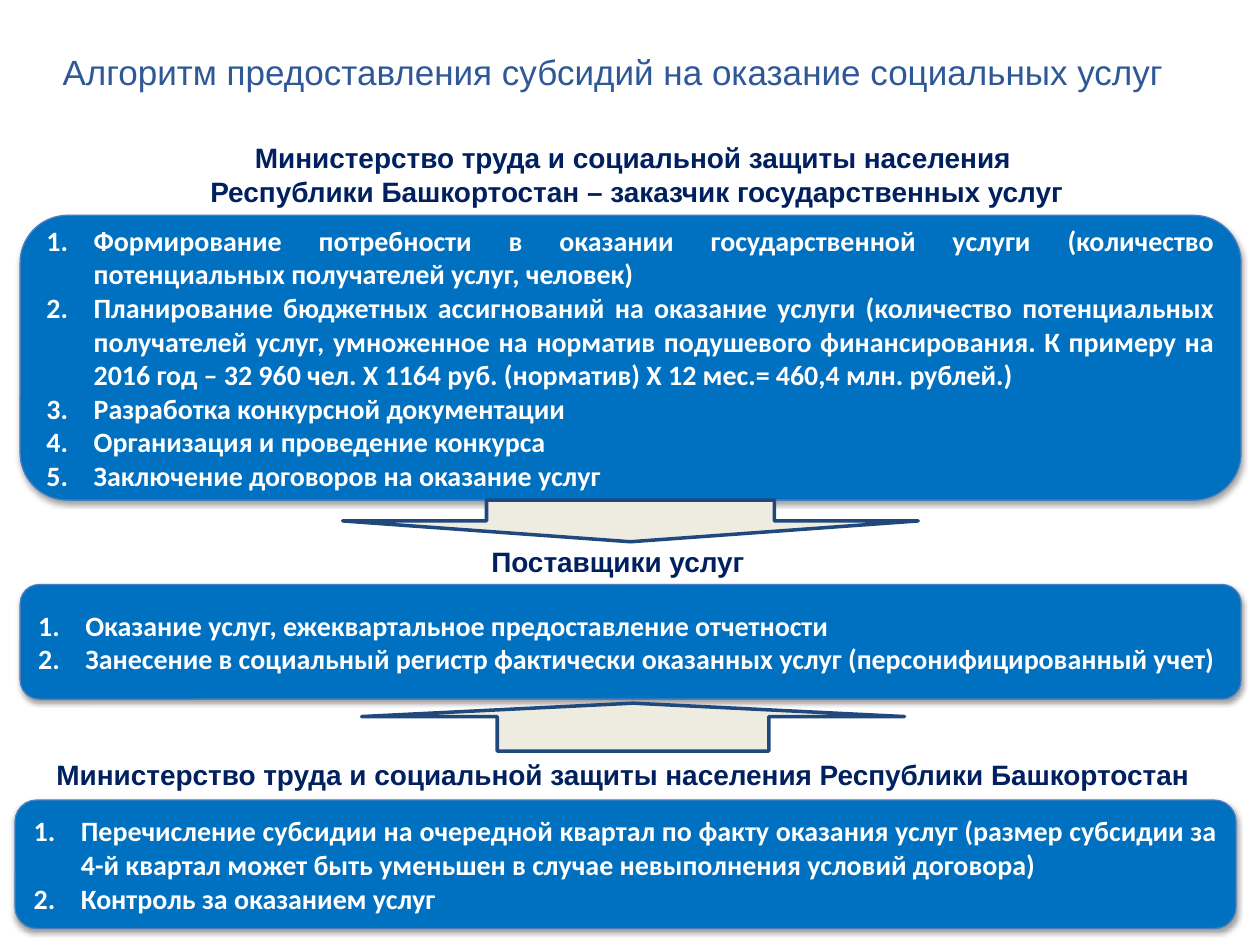
from lxml.etree import SubElement
from pptx import Presentation
from pptx.dml.color import RGBColor
from pptx.enum.shapes import MSO_SHAPE
from pptx.enum.text import MSO_ANCHOR, MSO_AUTO_SIZE, PP_ALIGN
from pptx.oxml.ns import qn
from pptx.util import Pt

NAVY = "002060"
LIST_INDENT = 27


def color(value):
    return RGBColor.from_string(value)


def place(shape, left, top, width, height):
    shape.left, shape.top = Pt(left), Pt(top)
    shape.width, shape.height = Pt(width), Pt(height)


def write_text(frame, lines, font="Arial", size=16, fill=NAVY, bold=True,
               align=PP_ALIGN.CENTER, anchor=MSO_ANCHOR.TOP, numbered=False):
    frame.word_wrap = True
    frame.auto_size = MSO_AUTO_SIZE.NONE
    frame.vertical_anchor = anchor
    for index, line in enumerate(lines):
        paragraph = frame.paragraphs[0] if index == 0 else frame.add_paragraph()
        paragraph.alignment = align
        if numbered:
            add_number(paragraph)
        run = paragraph.add_run()
        run.text = line
        run.font.name = font
        run.font.size = Pt(size)
        run.font.bold = bold
        run.font.color.rgb = color(fill)


def add_number(paragraph):
    properties = paragraph._p.get_or_add_pPr()
    properties.set("marL", str(Pt(LIST_INDENT)))
    properties.set("indent", str(-Pt(LIST_INDENT)))
    SubElement(properties, qn("a:buFont"), typeface="+mj-lt")
    SubElement(properties, qn("a:buAutoNum"), type="arabicPeriod")


def add_soft_shadow(shape):
    effects = shape._element.spPr.find(qn("a:effectLst"))
    shadow = SubElement(effects, qn("a:outerShdw"), blurRad=str(Pt(3.1)),
                        dist=str(Pt(1.6)), dir="5400000", rotWithShape="0")
    black = SubElement(shadow, qn("a:srgbClr"), val="000000")
    SubElement(black, qn("a:alpha"), val="38000")


def add_shape(slide, kind, box, fill, line, line_width):
    shape = slide.shapes.add_shape(kind, *map(Pt, box))
    shape.shadow.inherit = False
    shape.fill.solid()
    shape.fill.fore_color.rgb = color(fill)
    shape.line.color.rgb = color(line)
    shape.line.width = Pt(line_width)
    return shape


def add_step_panel(slide, box, steps):
    panel = add_shape(slide, MSO_SHAPE.ROUNDED_RECTANGLE, box,
                      "0070C0", "4B7EBC", 0.75)
    add_soft_shadow(panel)
    write_text(panel.text_frame, steps, font="Calibri", fill="FFFFFF",
               align=PP_ALIGN.JUSTIFY, anchor=MSO_ANCHOR.MIDDLE, numbered=True)


def add_arrow(slide, kind, box, head=0.5):
    arrow = add_shape(slide, kind, box, "EEECE1", "1F497D", 2)
    arrow.adjustments[1] = head


def add_heading(slide, box, lines):
    heading = slide.shapes.add_textbox(*map(Pt, box))
    write_text(heading.text_frame, lines)


def main():
    presentation = Presentation()
    presentation.slide_width, presentation.slide_height = Pt(720), Pt(540)
    slide = presentation.slides.add_slide(presentation.slide_layouts[5])

    # Title
    title = slide.shapes.title
    place(title, 0, 25.2, 706.3, 31.7)
    write_text(title.text_frame,
               ["Алгоритм предоставления субсидий на оказание социальных услуг "],
               size=20, fill="2F5897", bold=False)

    # Customer: the ministry plans and contracts
    add_step_panel(slide, (11.5, 123.1, 697.7, 162.7), [
        "Формирование потребности в оказании государственной услуги "
        "(количество потенциальных получателей услуг, человек)",
        "Планирование бюджетных ассигнований на оказание услуги (количество "
        "потенциальных получателей услуг, умноженное на норматив подушевого "
        "финансирования. К примеру на 2016 год – 32 960 чел. Х 1164 руб. "
        "(норматив) Х 12 мес.= 460,4 млн. рублей.)",
        "Разработка конкурсной документации",
        "Организация и проведение конкурса",
        "Заключение договоров на оказание услуг",
    ])
    add_heading(slide, (22.3, 77, 683.3, 46), [
        "Министерство труда и социальной защиты населения ",
        "Республики Башкортостан – заказчик государственных услуг",
    ])
    add_arrow(slide, MSO_SHAPE.DOWN_ARROW, (195.8, 285.8, 329, 23.8))

    # Service providers
    add_heading(slide, (206.6, 307.4, 293, 26.6), ["Поставщики услуг"])
    add_step_panel(slide, (11.5, 334, 697.7, 65.5), [
        "Оказание услуг, ежеквартальное предоставление отчетности",
        "Занесение в социальный регистр фактически оказанных услуг "
        "(персонифицированный учет)",
    ])

    # Ministry pays and supervises
    add_heading(slide, (10.8, 429.1, 690.5, 26.6), [
        "Министерство труда и социальной защиты населения "
        "Республики Башкортостан",
    ])
    add_arrow(slide, MSO_SHAPE.UP_ARROW, (206.6, 401.8, 310.3, 27.4), head=0.28)
    add_step_panel(slide, (8.6, 457.2, 697.7, 73.4), [
        "Перечисление субсидии на очередной квартал по факту оказания услуг "
        "(размер субсидии за 4-й квартал может быть уменьшен в случае "
        "невыполнения условий договора)",
        "Контроль за оказанием услуг",
    ])

    presentation.save("out.pptx")


if __name__ == "__main__":
    main()
